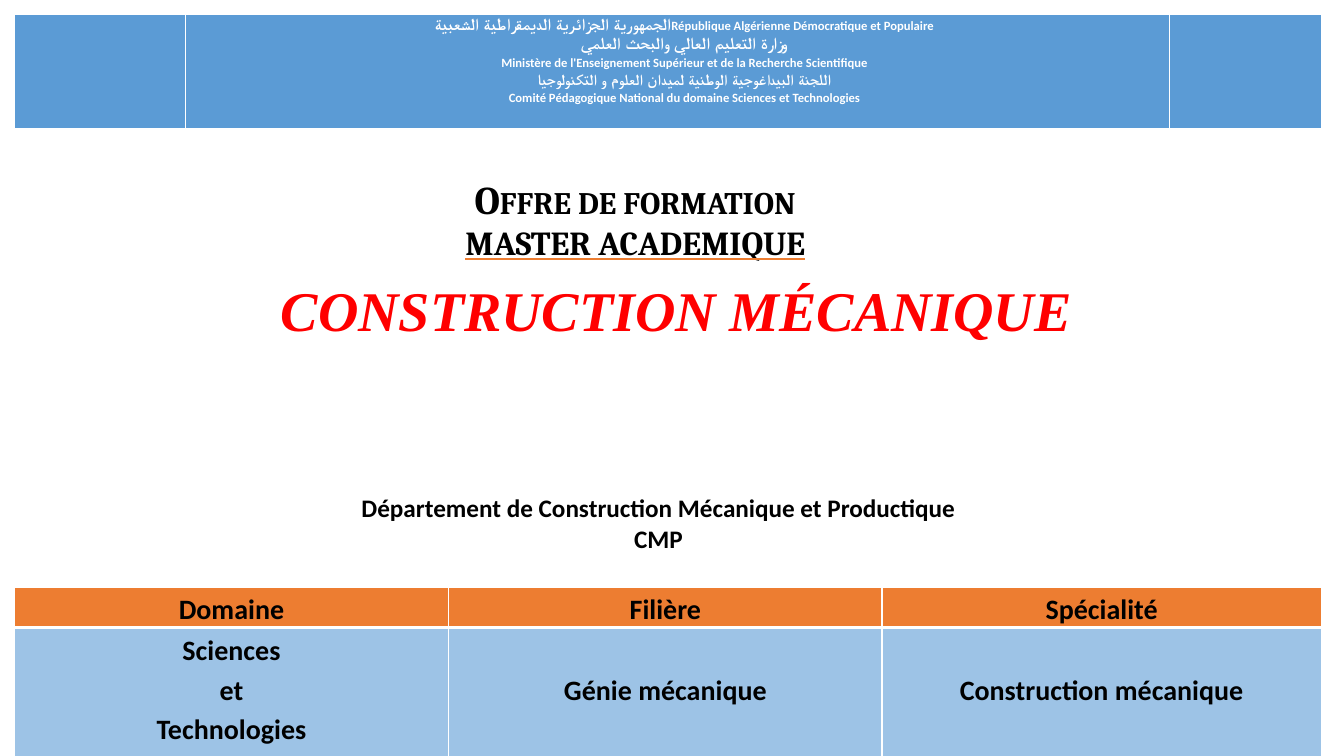
"""Builds the cover slide of a master's programme in mechanical construction."""
from lxml import etree
from pptx import Presentation
from pptx.dml.color import RGBColor
from pptx.enum.text import MSO_ANCHOR, MSO_AUTO_SIZE, PP_ALIGN
from pptx.oxml.ns import qn
from pptx.util import Cm, Pt

THEME = {
    "white": "FFFFFF", "black": "000000", "red": "FF0000",
    "blue": "5B9BD5", "pale": "9DC3E6", "orange": "ED7D31",
    "body": "Calibri", "heading": "Cambria", "display": "Times New Roman",
    "arabic": 12, "committee": 11, "french": 9, "offer": 28, "degree": 24,
    "programme": 40, "department": 18, "grid": 20, "thin": 1, "thick": 3,
}

MINISTRY = [
    [("الجمهورية الجزائرية الديمقراطية الشعبية", "arabic"),
     ("République Algérienne Démocratique et Populaire", "french")],
    [("وزارة التعليم العالي والبحث العلمي", "arabic")],
    [("Ministère de l'Enseignement Supérieur et de la Recherche Scientifique", "french")],
    [("اللجنة البيداغوجية الوطنية لميدان العلوم و التكنولوجيا", "committee")],
    [("Comité Pédagogique National du domaine Sciences et Technologies", "french")],
]
OFFER = [[("Offre de formation", "offer")], [("MASTER ACADEMIQUE", "degree")]]
PROGRAMME = [[("CONSTRUCTION MÉCANIQUE", "programme")]]
DEPARTMENT = [
    [("Département de Construction Mécanique et Productique", "department")],
    [("CMP", "department")],
]
FIELDS = [
    ("Domaine", ["Sciences", "et", "Technologies"]),
    ("Filière", ["Génie mécanique"]),
    ("Spécialité", ["Construction mécanique"]),
]

MARGIN = 0.36
BANNER = {"top": 0.36, "columns": [4.32, 24.79, 3.83], "rows": [2.92]}
GRID = {"top": 14.81, "columns": [10.95, 10.92, 11.07], "rows": [1, 3.25]}


def write(frame, lines, face, color, align=PP_ALIGN.CENTER, spacing=None):
    """Fill a text frame with lines made of (text, size) pieces."""
    for index, line in enumerate(lines):
        paragraph = frame.add_paragraph() if index else frame.paragraphs[0]
        paragraph.alignment = align
        paragraph.line_spacing = spacing
        for words, size in line:
            run = paragraph.add_run()
            run.text = words
            run.font.size = Pt(THEME[size])
            run.font.name = THEME[face]
            run.font.bold = True
            run.font.color.rgb = RGBColor.from_string(THEME[color])


def add_text(slide, box, lines, face, color, wrap=False, align=PP_ALIGN.CENTER):
    """Add a text box and return its paragraphs."""
    frame = slide.shapes.add_textbox(*map(Cm, box)).text_frame
    frame.word_wrap = wrap
    frame.auto_size = MSO_AUTO_SIZE.SHAPE_TO_FIT_TEXT
    write(frame, lines, face, color, align)
    return frame.paragraphs


def add_solid(parent, color):
    """Append a solid fill in a theme colour."""
    solid = etree.SubElement(parent, qn("a:solidFill"))
    etree.SubElement(solid, qn("a:srgbClr"), val=THEME[color])


def style_cell(cell, fill, above, below):
    """Give a cell its borders, fill and margins."""
    properties = cell._tc.get_or_add_tcPr()
    for side, weight in zip("LRTB", ("thin", "thin", above, below)):
        border = etree.SubElement(properties, qn(f"a:ln{side}"), w=str(Pt(THEME[weight])))
        add_solid(border, "white")
    cell.fill.solid()
    cell.fill.fore_color.rgb = RGBColor.from_string(THEME[fill])
    cell.margin_left = cell.margin_right = Cm(0.18)
    cell.margin_top = cell.margin_bottom = 0


def add_grid(slide, layout, fills):
    """Add a table whose first row carries the thick rule."""
    columns, rows = layout["columns"], layout["rows"]
    table = slide.shapes.add_table(
        len(rows), len(columns), Cm(MARGIN), Cm(layout["top"]),
        Cm(sum(columns)), Cm(sum(rows))).table
    table.horz_banding = False
    for column, width in zip(table.columns, columns):
        column.width = Cm(width)
    for index, (row, height, fill) in enumerate(zip(table.rows, rows, fills)):
        row.height = Cm(height)
        rules = ("thick", "thin") if index else ("thin", "thick")
        for cell in row.cells:
            style_cell(cell, fill, *rules)
    return table


def main():
    """Lay out the slide and save it."""
    deck = Presentation()
    deck.slide_width, deck.slide_height = Cm(33.87), Cm(19.05)
    slide = deck.slides.add_slide(deck.slide_layouts[6])

    ministry = add_grid(slide, BANNER, ["blue"]).cell(0, 1).text_frame
    write(ministry, MINISTRY, "body", "white", spacing=1.15)
    for paragraph in ministry.paragraphs:
        indents = paragraph._p.get_or_add_pPr()
        indents.set("marL", str(Cm(0.64)))
        indents.set("indent", str(Cm(-0.3)))

    offer, degree = add_text(
        slide, (7.54, 4.29, 16.94, 2.49), OFFER, "heading", "black", wrap=True)
    offer.runs[0].font._element.set("cap", "small")
    degree.runs[0].font.underline = True
    underline = etree.Element(qn("a:uFill"))
    add_solid(underline, "orange")
    degree.runs[0].font._element.find(qn("a:latin")).addprevious(underline)

    fields = add_grid(slide, GRID, ["orange", "pale"])
    for column, (heading, values) in enumerate(FIELDS):
        for row, lines in enumerate(([heading], values)):
            cell = fields.cell(row, column)
            write(cell.text_frame, [[(line, "grid")] for line in lines],
                  "body", "black", spacing=1.15)
            if row:
                cell.vertical_anchor = MSO_ANCHOR.MIDDLE
                cell.margin_bottom = Cm(0.2)

    programme, = add_text(slide, (6.83, 6.81, 20.65, 1.96), PROGRAMME,
                          "display", "red", align=PP_ALIGN.LEFT)
    programme.runs[0].font.italic = True
    department, _ = add_text(
        slide, (8.86, 12.29, 15.6, 1.8), DEPARTMENT, "body", "black")
    department.alignment = PP_ALIGN.LEFT

    deck.save("out.pptx")


if __name__ == "__main__":
    main()
